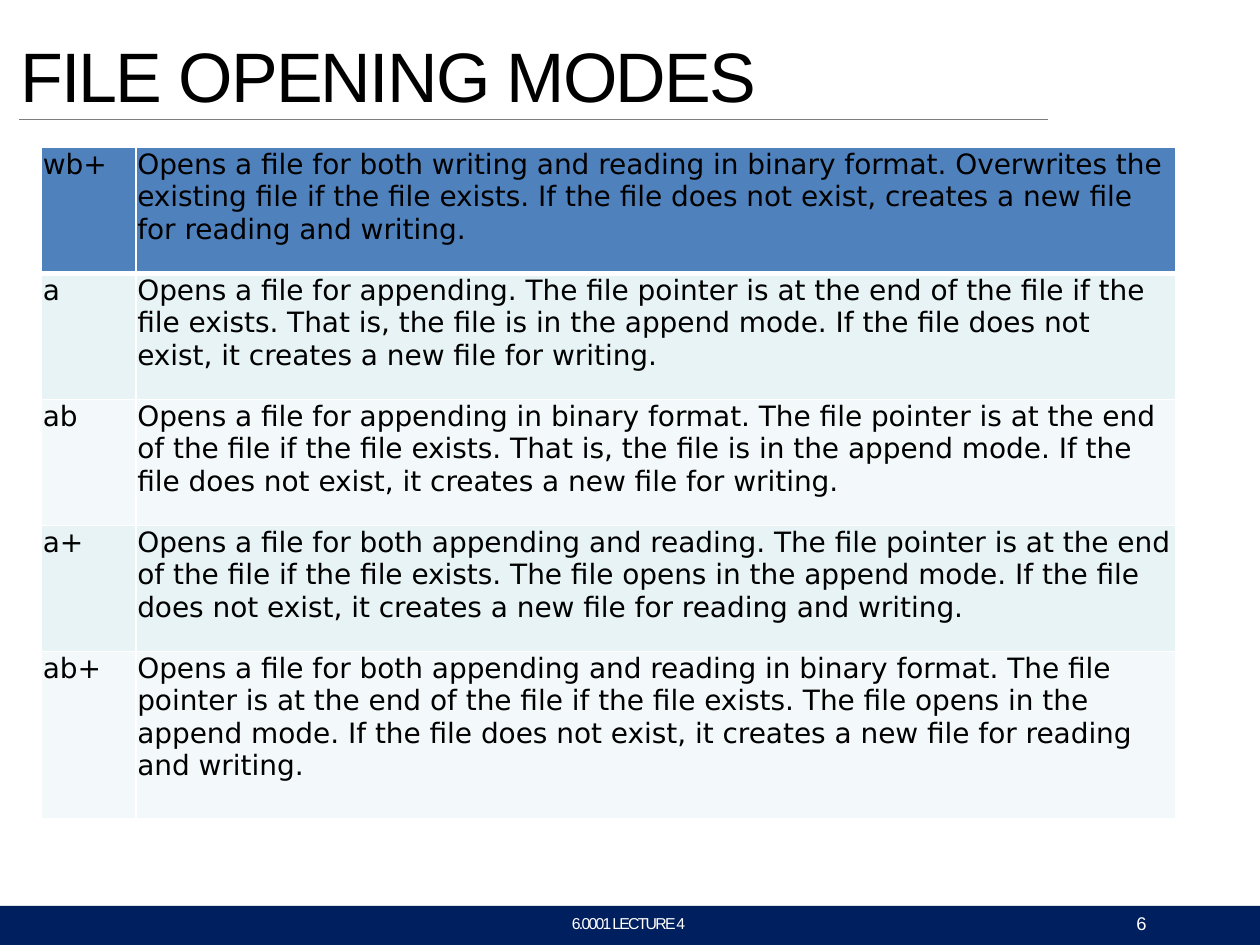
"""Build the slide on file opening modes."""
from lxml import etree
from pptx import Presentation
from pptx import util as u
from pptx.dml.color import RGBColor
from pptx.enum import shapes, text
from pptx.oxml import ns

NAVY = RGBColor(0x00, 0x1F, 0x5F)
GREY = RGBColor(0x7E, 0x7E, 0x7E)
BLACK = RGBColor(0x00, 0x00, 0x00)
WHITE = RGBColor(0xFF, 0xFF, 0xFF)
BLUE = RGBColor(0x4F, 0x81, 0xBD)
BANDS = (RGBColor(0xF3, 0xF9, 0xFA), RGBColor(0xE7, 0xF3, 0xF4))

MODES = [
    ("wb+", "Opens a file for both writing and reading in binary format. "
            "Overwrites the existing file if the file exists. If the file does not "
            "exist, creates a new file for reading and writing."),
    ("a", "Opens a file for appending. The file pointer is at the end of the file "
          "if the file exists. That is, the file is in the append mode. If the file "
          "does not exist, it creates a new file for writing."),
    ("ab", "Opens a file for appending in binary format. The file pointer is at the "
           "end of the file if the file exists. That is, the file is in the append "
           "mode. If the file does not exist, it creates a new file for writing."),
    ("a+", "Opens a file for both appending and reading. The file pointer is at the "
           "end of the file if the file exists. The file opens in the append mode. "
           "If the file does not exist, it creates a new file for reading and writing."),
    ("ab+", "Opens a file for both appending and reading in binary format. The file "
            "pointer is at the end of the file if the file exists. The file opens in "
            "the append mode. If the file does not exist, it creates a new file for "
            "reading and writing."),
]


class SlideBuilder:
    """Holds the text style and the current slide."""

    heading_font = "Arial"
    table_font = "DejaVu Sans"

    def __init__(self, slide):
        self.slide = slide

    def set_text(self, frame, words, size, color, top=0):
        """Fill a frame with one tightly spaced left-aligned paragraph."""
        frame.margin_left = u.Inches(0.01)
        frame.margin_right = frame.margin_bottom = 0
        frame.margin_top = u.Inches(top)
        frame.vertical_anchor = text.MSO_ANCHOR.TOP
        frame.auto_size = text.MSO_AUTO_SIZE.NONE
        paragraph = frame.paragraphs[0]
        paragraph.text = words
        paragraph.alignment = text.PP_ALIGN.LEFT
        font = paragraph.font
        font.name, font.size, font.color.rgb = self.heading_font, u.Pt(size), color
        paragraph.runs[0].font._element.set("spc", "-100")
        return paragraph

    def title(self, words, box):
        """Place the slide title."""
        title = self.slide.shapes.title
        title.left, title.top, title.width, title.height = map(u.Inches, box)
        self.set_text(title.text_frame, words, 40, BLACK, 0.01).space_before = u.Pt(1)

    def label(self, words, box, size, top=0):
        """Add a white footer label."""
        label = self.slide.shapes.add_textbox(*map(u.Inches, box))
        label.text_frame.word_wrap = False
        return self.set_text(label.text_frame, words, size, WHITE, top)

    def bar(self, box, color):
        """Add a plain filled bar."""
        bar = self.slide.shapes.add_shape(
            shapes.MSO_SHAPE.RECTANGLE, *map(u.Inches, box))
        bar.shadow.inherit = False
        bar.fill.solid()
        bar.fill.fore_color.rgb = color
        bar.line.fill.background()

    def rule(self, ends, color, width):
        """Add a straight line."""
        rule = self.slide.shapes.add_connector(
            shapes.MSO_CONNECTOR.STRAIGHT, *map(u.Inches, ends))
        rule.line.color.rgb, rule.line.width = color, u.Pt(width)
        etree.SubElement(rule._element.spPr, ns.qn("a:effectLst"))

    def borders(self, cell, widths):
        """Draw white borders of the given point widths on a cell."""
        properties = cell._tc.get_or_add_tcPr()
        for index, (side, width) in enumerate(widths.items()):
            line = etree.Element(ns.qn(f"a:ln{side}"), w=str(u.Pt(width)))
            fill = etree.SubElement(line, ns.qn("a:solidFill"))
            etree.SubElement(fill, ns.qn("a:srgbClr"), val=str(WHITE))
            properties.insert(index, line)

    def table(self, rows, box, widths, heights):
        """Add a banded table whose first row is a heading."""
        table = self.slide.shapes.add_table(
            len(rows), len(widths), *map(u.Inches, box)).table
        for column, width in zip(table.columns, widths):
            column.width = u.Inches(width)
        for r, (row, height) in enumerate(zip(rows, heights)):
            table.rows[r].height = u.Inches(height)
            for c, words in enumerate(row):
                cell = table.cell(r, c)
                cell.margin_left = cell.margin_right = u.Inches(0.01)
                cell.margin_top, cell.margin_bottom = u.Inches(0.01), 0
                cell.fill.solid()
                cell.fill.fore_color.rgb = BANDS[r % 2] if r else BLUE
                cell.text = words
                font = cell.text_frame.paragraphs[0].font
                font.name, font.size = self.table_font, u.Pt(16)
                font.bold, font.color.rgb = False, BLACK
                self.borders(cell, {"L": 1, "R": 1, "T": 3 if r == 1 else 1,
                                    "B": 1 if r else 3})


def main():
    """Build and save the slide."""
    deck = Presentation()
    deck.slide_width, deck.slide_height = u.Inches(10), u.Inches(7.5)
    builder = SlideBuilder(deck.slides.add_slide(deck.slide_layouts[5]))
    builder.bar((0, 7.19, 10, 0.31), NAVY)
    builder.rule((0.15, 0.95, 8.32, 0.95), GREY, 0.48)
    builder.title("FILE OPENING MODES", (0.15, 0.25, 9.83, 0.69))
    footer = builder.label("6.0001 LECTURE 4", (4.53, 7.27, 0.94, 0.14), 9)
    footer.line_spacing = u.Pt(9.6)
    number = builder.label("6", (9.01, 7.19, 0.13, 0.22), 10.5, 0.05)
    number.space_before = u.Pt(3.3)
    builder.table(MODES, (0.33, 1.17, 9, 5.33), (0.75, 8.25), (1, 1, 1, 1, 1.33))
    deck.save("out.pptx")


if __name__ == "__main__":
    main()
